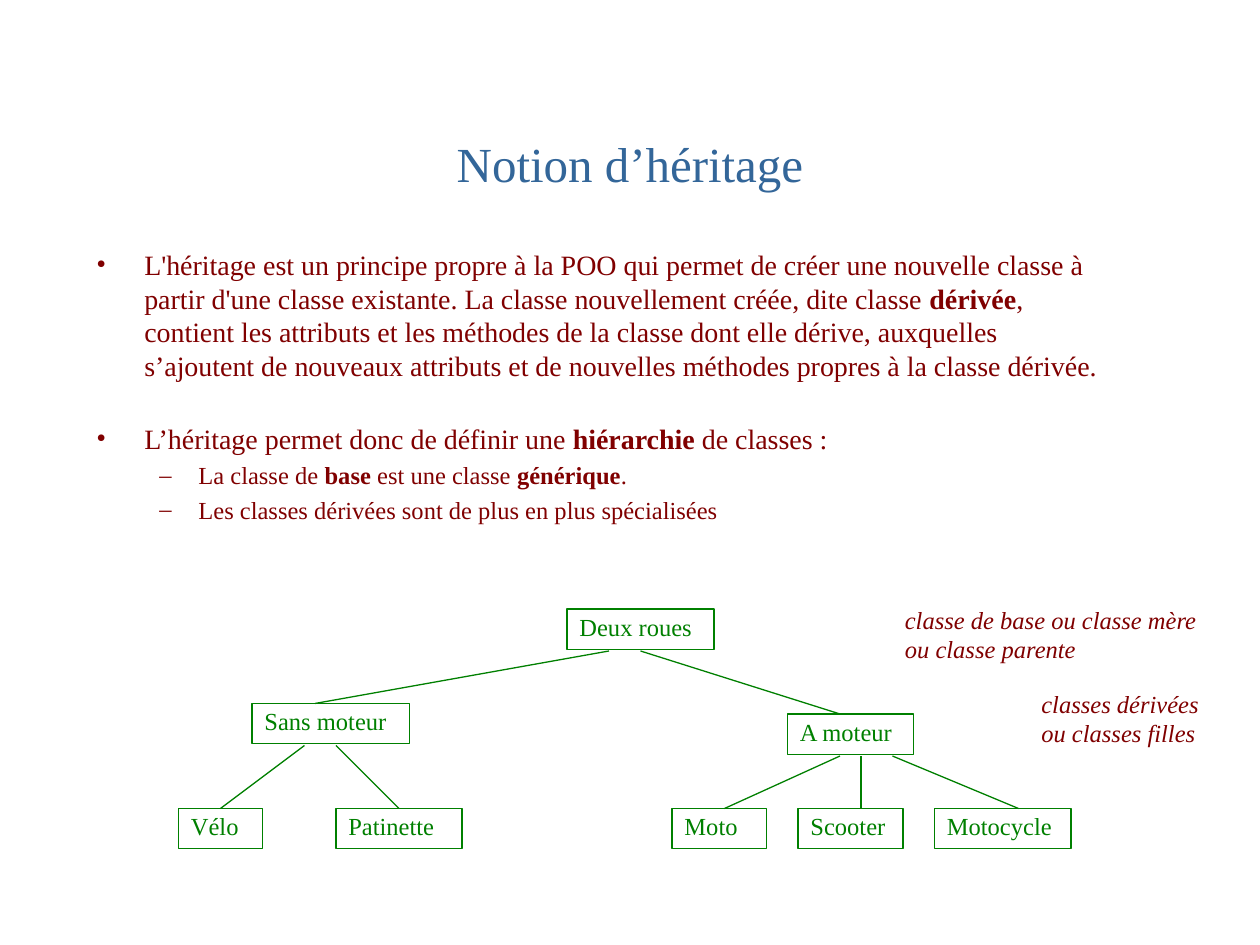
from lxml.etree import SubElement
from pptx import Presentation
from pptx.dml.color import RGBColor
from pptx.enum.shapes import MSO_CONNECTOR as Connector, MSO_SHAPE as Shape
from pptx.enum.text import MSO_ANCHOR as Anchor, PP_ALIGN as Align
from pptx.oxml.ns import qn
from pptx.util import Inches, Pt

FONT = "Times New Roman"
BLUE, MAROON, GREEN = "336699", "800000", "008000"
TITLE = "Notion d’héritage"

# Bullets: level, space before, runs as (text, bold)
BULLETS = [
    (0, 0, [("L'héritage est un principe propre à la POO qui permet de créer une nouvelle "
             "classe à partir d'une classe existante. La classe nouvellement créée, dite classe ", False),
            ("dérivée", True),
            (", contient les attributs et les méthodes de la classe dont elle dérive, auxquelles "
             "s’ajoutent de nouveaux attributs et de nouvelles méthodes propres à la classe dérivée.", False)]),
    (0, 22.5, [("L’héritage permet donc de définir une ", False), ("hiérarchie", True),
               (" de classes :", False)]),
    (1, 3, [("La classe de ", False), ("base", True), (" est une classe ", False),
            ("générique", True), (".", False)]),
    (1, 3, [("Les classes dérivées sont de plus en plus spécialisées", False)]),
]
# Level: size, bullet, text margin, hanging indent
LEVELS = [(16, "•", 0.38, 0.38), (14, "–", 0.81, 0.31)]

# Hierarchy on a grid of twelfths of an inch: name -> column, row, width
CLASSES = {
    "Deux roues": (54, 58, 14),
    "Sans moteur": (24, 67, 15),
    "A moteur": (75, 68, 12),
    "Vélo": (17, 77, 8),
    "Patinette": (32, 77, 12),
    "Moto": (64, 77, 9),
    "Scooter": (76, 77, 10),
    "Motocycle": (89, 77, 13),
}
# Links: parent, column left from, child, column reached
LINKS = [
    ("Deux roues", 58, "Sans moteur", 30),
    ("Deux roues", 61, "A moteur", 80),
    ("Sans moteur", 29, "Vélo", 21),
    ("Sans moteur", 32, "Patinette", 38),
    ("A moteur", 80, "Moto", 69),
    ("A moteur", 82, "Scooter", 82),
    ("A moteur", 85, "Motocycle", 97),
]
# Notes: text, column, row, width
NOTES = [
    ("classe de base ou classe mère ou classe parente", 85, 57, 31),
    ("classes dérivées ou classes filles", 98, 65, 18),
]
BOX_HEIGHT = Inches(0.32)
LINK_DROP = 4


def color(value):
    return RGBColor.from_string(value)


def grid(units):
    return Inches(units / 12)


def add_span(para, text, ink, **formats):
    span = para.add_run()
    span.text = text
    span.font.color.rgb = color(ink)
    for name, value in {"name": FONT, **formats}.items():
        setattr(span.font, name, value)


def set_bullet(para, mark, margin, hang):
    properties = para._p.get_or_add_pPr()
    properties.set("marL", str(Inches(margin)))
    properties.set("indent", str(-Inches(hang)))
    SubElement(properties, qn("a:buFont")).set("typeface", FONT)
    SubElement(properties, qn("a:buChar")).set("char", mark)


def add_text_box(page, left, top, width, height):
    frame = page.shapes.add_textbox(left, top, width, height).text_frame
    frame.word_wrap = True
    return frame


def style_line(line):
    line.color.rgb = color(GREEN)
    line.width = Pt(0.75)


deck = Presentation()
deck.slide_width, deck.slide_height = Inches(10), Inches(7.5)
page = deck.slides.add_slide(deck.slide_layouts[5])

# Title
title = page.shapes.title
title.left, title.top, title.width, title.height = map(grid, (9, 8, 102, 15))
title.text_frame.vertical_anchor = Anchor.MIDDLE
para = title.text_frame.paragraphs[0]
para.alignment = Align.CENTER
add_span(para, TITLE, BLUE, size=Pt(28))

# Bulleted text
frame = add_text_box(page, *map(grid, (8, 23, 99, 30)))
for index, (level, gap, spans) in enumerate(BULLETS):
    para = frame.add_paragraph() if index else frame.paragraphs[0]
    para.level = level
    para.space_before = Pt(gap)
    size, *bullet = LEVELS[level]
    set_bullet(para, *bullet)
    for text, bold in spans:
        add_span(para, text, MAROON, size=Pt(size), bold=bold)

# Class boxes
for name, (column, row, width) in CLASSES.items():
    box = page.shapes.add_shape(Shape.RECTANGLE, grid(column), grid(row), grid(width), BOX_HEIGHT)
    box.shadow.inherit = False
    box.fill.background()
    style_line(box.line)
    box.text_frame.word_wrap = True
    box.text_frame.vertical_anchor = Anchor.TOP
    para = box.text_frame.paragraphs[0]
    para.alignment = Align.LEFT
    para.line_spacing = 0.9
    add_span(para, name, GREEN, size=Pt(14))

# Links from each parent down to its children
for parent, start, child, end in LINKS:
    ends = (start, CLASSES[parent][1] + LINK_DROP, end, CLASSES[child][1])
    link = page.shapes.add_connector(Connector.STRAIGHT, *map(grid, ends))
    style_line(link.line)
    SubElement(link._element.spPr, qn("a:effectLst"))

# Side notes
for text, column, row, width in NOTES:
    frame = add_text_box(page, grid(column), grid(row), grid(width), Inches(0.57))
    add_span(frame.paragraphs[0], text, MAROON, size=Pt(14), italic=True)

deck.save("out.pptx")
